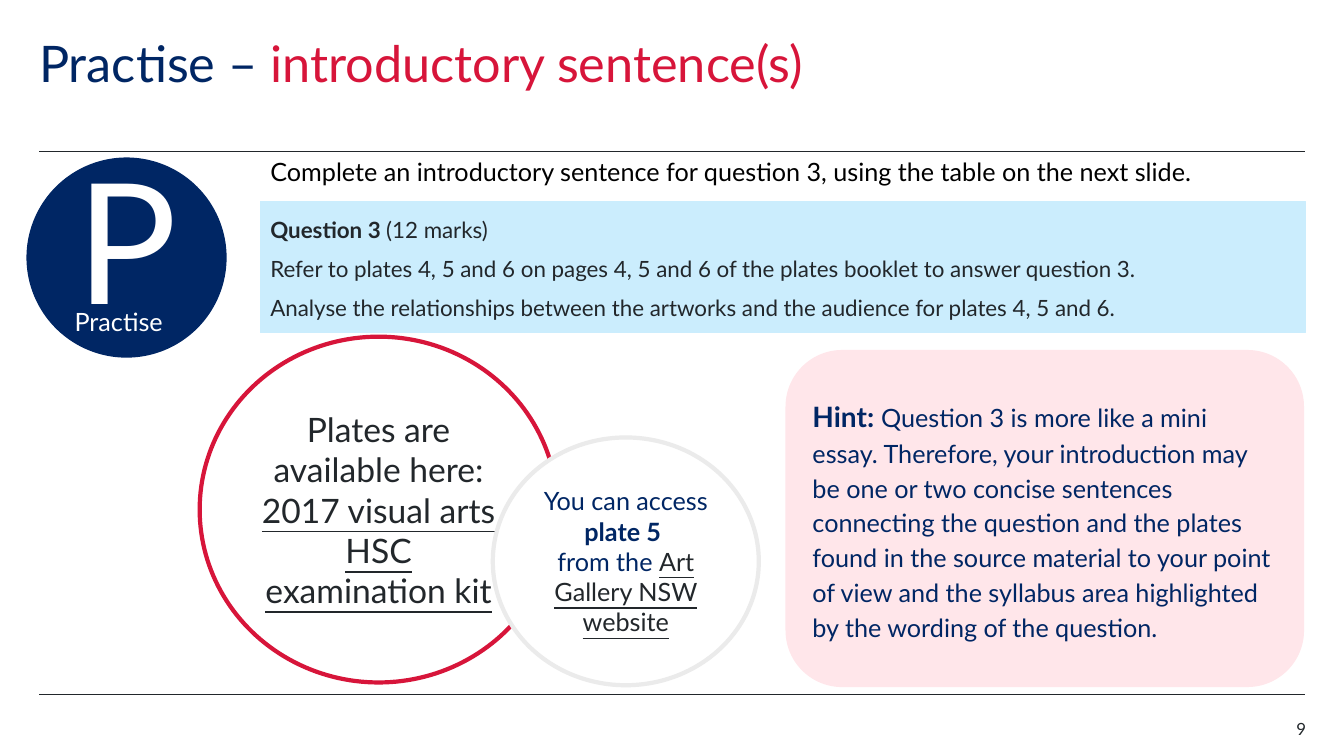
from lxml import etree
from pptx import Presentation
from pptx.dml.color import RGBColor
from pptx.enum import shapes as sh, text as tx
from pptx.oxml.ns import qn
from pptx.util import Pt

NAVY = RGBColor(0x00, 0x26, 0x64)
RED = RGBColor(0xD7, 0x15, 0x3A)
INK = RGBColor(0x22, 0x27, 0x2B)
BLACK = RGBColor(0, 0, 0)
WHITE = RGBColor(0xFF, 0xFF, 0xFF)
SKY = RGBColor(0xCB, 0xED, 0xFD)
PINK = RGBColor(0xFF, 0xE6, 0xEA)
GREY = RGBColor(0xEB, 0xEB, 0xEB)

FONT = "Lato"
LEFT, RIGHT = 28, 932.4  # content margins
OVAL = sh.MSO_SHAPE.OVAL
MID = tx.MSO_ANCHOR.MIDDLE
ALIGN = tx.PP_ALIGN


def run(text, size, color, bold=False, under=False):
    return text, size, color, bold, under


def write(frame, paras, align=ALIGN.LEFT, line=None, gap=0):
    """Fill a text frame; each paragraph is a list of runs."""
    frame.word_wrap = True
    for i, runs in enumerate(paras):
        para = frame.add_paragraph() if i else frame.paragraphs[0]
        para.alignment = align
        if line:
            para.line_spacing = line
        if i and gap:
            para.space_before = Pt(gap)
        for words, size, color, bold, under in runs:
            r = para.add_run()
            r.text = words
            r.font.name = FONT
            r.font.size = Pt(size)
            r.font.color.rgb = color
            r.font.bold = bold
            r.font.underline = under


def label(slide, box, paras, inset=True, **style):
    frame = slide.shapes.add_textbox(*map(Pt, box)).text_frame
    if not inset:
        frame.margin_left = frame.margin_right = 0
        frame.margin_top = frame.margin_bottom = 0
    write(frame, paras, **style)


def panel(slide, kind, box, fill, edge, width, paras, low=3.6, **style):
    """Draw a filled shape with text; low is its bottom inset."""
    shape = slide.shapes.add_shape(kind, *map(Pt, box))
    shape.shadow.inherit = False
    shape.fill.solid()
    shape.fill.fore_color.rgb = fill
    shape.line.color.rgb = edge
    shape.line.width = Pt(width)
    frame = shape.text_frame
    frame.vertical_anchor = MID
    frame.margin_bottom = Pt(low)
    write(frame, paras, **style)


def rule(slide, y):
    line = slide.shapes.add_connector(
        sh.MSO_CONNECTOR.STRAIGHT, Pt(LEFT), Pt(y), Pt(RIGHT), Pt(y))
    line.line.color.rgb = INK
    line.line.width = Pt(0.5)
    etree.SubElement(line._element.spPr, qn("a:effectLst"))


def main():
    deck = Presentation()
    deck.slide_width, deck.slide_height = Pt(960), Pt(540)
    slide = deck.slides.add_slide(deck.slide_layouts[6])

    # Frame rules and title
    for y in (108, 496):
        rule(slide, y)
    label(slide, (LEFT, 28, 793.5, 79), [[
        run("Practise – ", 36, NAVY),
        run("introductory sentence(s)", 36, RED)]], inset=False, line=0.9)

    # Practise badge
    panel(slide, OVAL, (19.4, 113, 142, 142), NAVY, NAVY, 1,
          [[run("P", 120, WHITE)]], low=32.4, align=ALIGN.CENTER)
    label(slide, (53.3, 219, 74, 34.5),
          [[run("Practise", 18, WHITE)]], inset=False)

    # Task and question
    label(slide, (186, 108, 759.5, 29), [[
        run("Complete an introductory sentence for question 3, "
            "using the table on the next slide.", 18, BLACK)]])
    panel(slide, sh.MSO_SHAPE.RECTANGLE, (186, 144, 746.5, 93.6), SKY, SKY, 1, [
        [run("Question 3 ", 16, INK, bold=True), run("(12 marks)", 16, INK)],
        [run("Refer to plates 4, 5 and 6 on pages 4, 5 and 6 of the plates "
             "booklet to answer question 3.", 16, INK)],
        [run("Analyse the relationships between the artworks and the audience "
             "for plates 4, 5 and 6.", 16, INK)],
    ], line=1.14, gap=6)

    # Where to find the plates
    panel(slide, OVAL, (142.6, 240.5, 255.6, 247), WHITE, RED, 3, [
        [run("Plates are available here:", 24, INK)],
        [run("2017 visual arts HSC examination kit", 24, INK, under=True)],
    ], align=ALIGN.CENTER)
    panel(slide, OVAL, (352, 312.5, 190, 177), WHITE, GREY, 3, [
        [run("You can access ", 18, NAVY), run("plate 5 ", 18, NAVY, bold=True)],
        [run("from the ", 18, NAVY),
         run("Art Gallery NSW website", 18, INK, under=True)],
    ], align=ALIGN.CENTER)

    # Hint
    panel(slide, sh.MSO_SHAPE.ROUNDED_RECTANGLE, (561.6, 250.5, 369.4, 239.8),
          PINK, PINK, 1, [[
              run("Hint: ", 20, NAVY, bold=True),
              run("Question 3 is more like a mini essay. Therefore, your "
                  "introduction may be one or two concise sentences connecting "
                  "the question and the plates found in the source material to "
                  "your point of view and the syllabus area highlighted by the "
                  "wording of the question.", 18, NAVY)]], line=1.15)

    # Page number
    label(slide, (876, 513.4, 57, 14.4), [[run("9", 12, INK)]],
          inset=False, align=ALIGN.RIGHT)

    deck.save("out.pptx")


if __name__ == "__main__":
    main()
